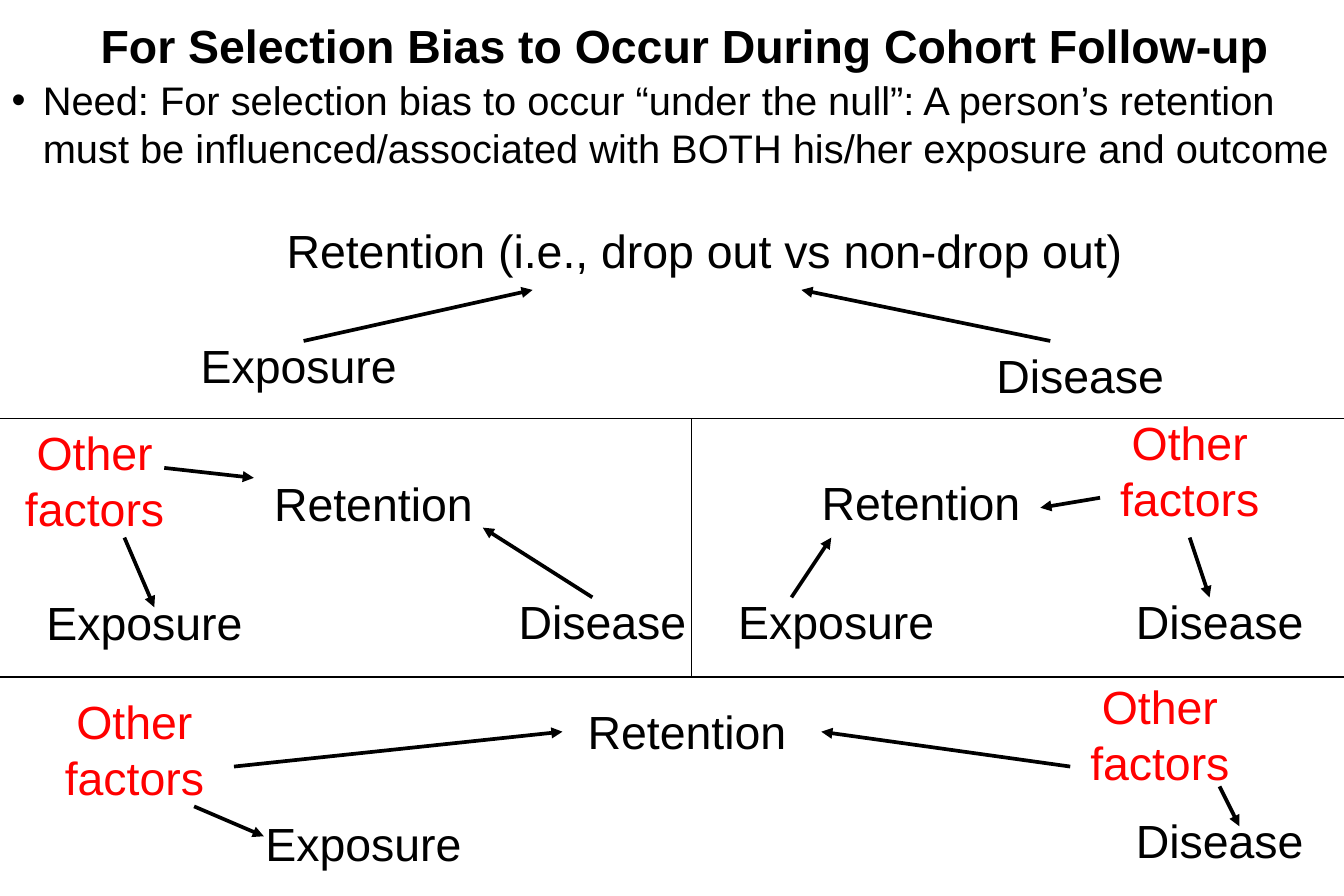
from lxml import etree
from pptx import Presentation
from pptx.dml.color import RGBColor
from pptx.enum.shapes import MSO_CONNECTOR
from pptx.enum.text import MSO_ANCHOR, PP_ALIGN
from pptx.oxml.ns import qn
from pptx.util import Inches, Pt

BLACK = RGBColor(0x00, 0x00, 0x00)
RED = RGBColor(0xFF, 0x00, 0x00)
FONT = "Arial"

# Grid: 24 units to the inch
COLUMNS, ROWS = 270, 180
UNIT = Inches(11.25) / COLUMNS
ONE_LINE, TWO_LINES = 13.75, 24.75

TITLE = "For Selection Bias to Occur During Cohort Follow-up"
NEED = ("Need: For selection bias to occur “under the null”: A person’s retention "
        "must be influenced/associated with BOTH his/her exposure and outcome")

# Each panel: labels as (text, column, row, columns wide),
# arrows as (from column, from row, to column, to row)
PANELS = [
    {"labels": [("Retention (i.e., drop out vs non-drop out)", 51, 43.5, 181),
                ("Exposure", 13, 66.5, 94),
                ("Disease", 170, 68.5, 94)],
     "arrows": [(61, 68.5, 107, 58.25), (211, 68.5, 161, 58.25)]},
    {"labels": [("Retention", 47, 94.25, 56),
                ("Exposure", 3, 118.25, 52),
                ("Disease", 101, 118, 40),
                ("Other factors", -9, 84, 56)],
     "arrows": [(25, 108, 31, 122), (33, 94, 51, 96), (119, 120, 97, 106)]},
    {"labels": [("Retention", 157, 94, 56),
                ("Exposure", 143, 118, 50),
                ("Disease", 225, 118, 40),
                ("Other factors", 211, 82, 56)],
     "arrows": [(159, 120, 167, 108), (239, 108, 243, 120), (221, 100, 209, 102)]},
    {"labels": [("Retention", 91, 140, 94),
                ("Exposure", 47, 162.5, 52),
                ("Disease", 225, 162, 40),
                ("Other factors", -1, 138, 56),
                ("Other factors", 205, 135, 56)],
     "arrows": [(47, 154, 113, 147), (215, 154, 165, 147),
                (39, 162, 53, 168), (245, 158, 249, 166)]},
]
DIVIDERS = [(0, 84, COLUMNS, 84), (0, 136, COLUMNS, 136), (139, 84, 139, 136)]


def grid(*positions):
    return [round(position * UNIT) for position in positions]


def add_text(slide, text, box, **font_format):
    shape = slide.shapes.add_textbox(*grid(*box))
    shape.text_frame.word_wrap = True
    paragraph = shape.text_frame.paragraphs[0]
    paragraph.alignment = PP_ALIGN.CENTER
    run = paragraph.add_run()
    run.text = text
    font = {"name": FONT, "size": Pt(28), "bold": False} | font_format
    color = font.pop("color", BLACK)
    for name, value in font.items():
        setattr(run.font, name, value)
    run.font.color.rgb = color
    return shape


def add_line(slide, ends, width, arrow=False):
    connector = slide.shapes.add_connector(MSO_CONNECTOR.STRAIGHT, *grid(*ends))
    connector.line.color.rgb = BLACK
    connector.line.width = Pt(width)
    if arrow:
        etree.SubElement(connector.line._get_or_add_ln(), qn("a:tailEnd"), type="triangle")
    etree.SubElement(connector._element.spPr, qn("a:effectLst"))


def add_bullet(paragraph, indent):
    properties = paragraph._p.get_or_add_pPr()
    properties.set("marL", str(indent))
    properties.set("indent", str(-indent))
    etree.SubElement(properties, qn("a:buFont"), typeface=FONT)
    etree.SubElement(properties, qn("a:buChar"), char="•")


def main():
    presentation = Presentation()
    presentation.slide_width, presentation.slide_height = grid(COLUMNS, ROWS)
    slide = presentation.slides.add_slide(presentation.slide_layouts[6])

    # Title and bulleted statement
    title = add_text(slide, TITLE, (17, 2, 241, 14), bold=True)
    title.text_frame.vertical_anchor = MSO_ANCHOR.MIDDLE
    need = add_text(slide, NEED, (0, 14, 275, 136), size=Pt(24))
    paragraph = need.text_frame.paragraphs[0]
    paragraph.alignment = PP_ALIGN.LEFT
    add_bullet(paragraph, Inches(0.26))

    # Causal diagrams
    for panel in PANELS:
        for text, column, row, width in panel["labels"]:
            is_other = text == "Other factors"
            height = TWO_LINES if is_other else ONE_LINE
            add_text(slide, text, (column, row, width, height),
                     color=RED if is_other else BLACK)
        for ends in panel["arrows"]:
            add_line(slide, ends, 2.25, arrow=True)

    # Panel dividers
    for ends in DIVIDERS:
        add_line(slide, ends, 0.75)

    presentation.save("out.pptx")


if __name__ == "__main__":
    main()
